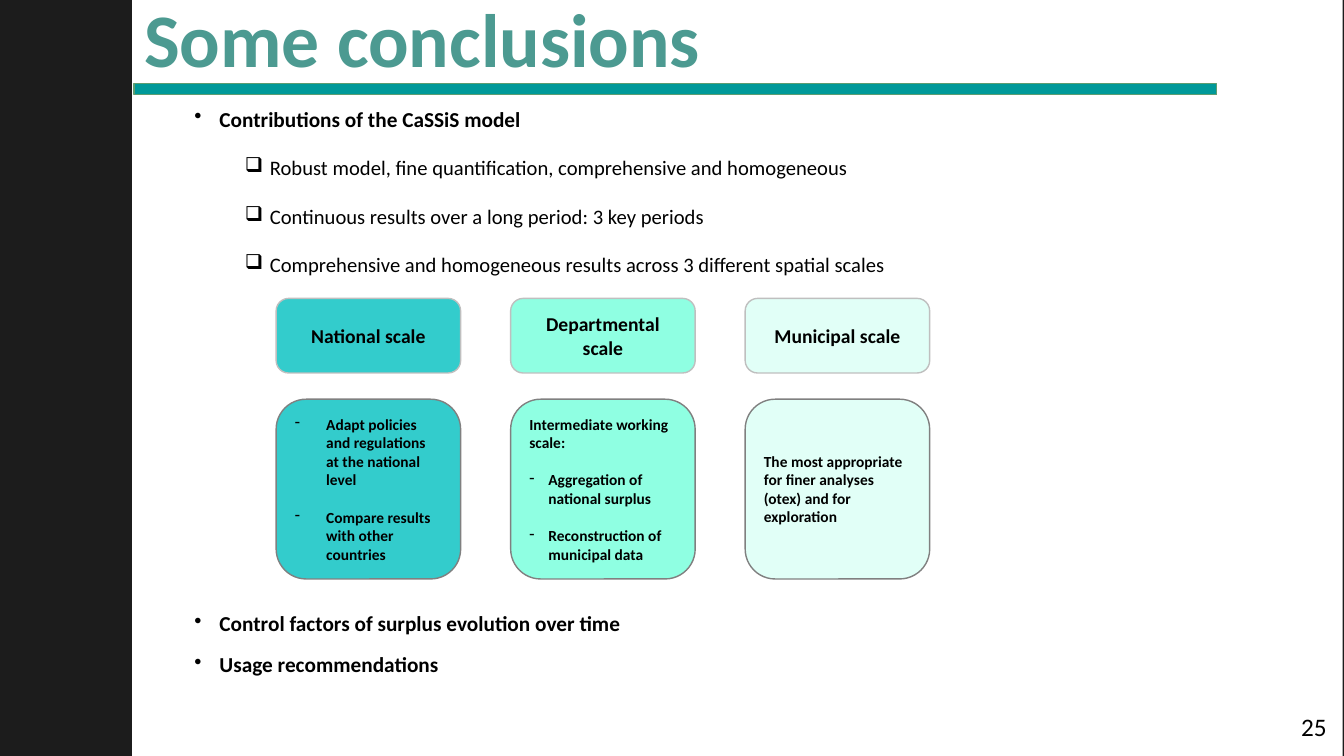
from dataclasses import dataclass

from lxml.etree import SubElement
from pptx import Presentation
from pptx.dml.color import RGBColor as Rgb
from pptx.enum.shapes import MSO_SHAPE as Kind
from pptx.enum.text import MSO_ANCHOR as Anchor, MSO_AUTO_SIZE as Fit, PP_ALIGN as Align
from pptx.oxml.ns import qn
from pptx.shapes.autoshape import Shape
from pptx.slide import Slide
from pptx.text.text import TextFrame
from pptx.util import Cm, Pt

HUES = {
    "dark": "1C1C1C", "white": "FFFFFF", "black": "000000",
    "title": "4C9A91", "bar": "009999", "rim": "5D9D71",
    "light": "BFBFBF", "grey": "808080",
    "nation": "33CCCC", "depart": "8FFFE2", "town": "E1FFF7",
}
FONT = "Calibri"


@dataclass
class Area:
    left: float
    top: float
    width: float
    height: float

    def size(self) -> tuple[Cm, Cm, Cm, Cm]:
        return Cm(self.left), Cm(self.top), Cm(self.width), Cm(self.height)


@dataclass
class Item:
    text: str
    size: float = 11
    bold: bool = True
    mark: str = ""
    left: float = 0
    hang: float = 0
    gap: float = 0
    align: Align = Align.LEFT
    hue: str = "black"


@dataclass
class Scale:
    name: str
    hue: str
    items: list[Item]


def color(name: str) -> Rgb:
    return Rgb.from_string(HUES[name])


def write(frame: TextFrame, items: list[Item]) -> None:
    frame.word_wrap = True
    for pos, item in enumerate(items):
        para = frame.add_paragraph() if pos else frame.paragraphs[0]
        para.alignment = item.align
        if item.mark:
            props = para._p.get_or_add_pPr()
            props.set("marL", str(Cm(item.left)))
            props.set("indent", str(-Cm(item.hang)))
            SubElement(props, qn("a:buChar")).set("char", item.mark)
        para.space_before = Pt(item.gap)
        run = para.add_run()
        run.text = item.text
        font = run.font
        font.name, font.size, font.bold = FONT, Pt(item.size), item.bold
        font.color.rgb = color(item.hue)


def draw(slide: Slide, kind: Kind, area: Area, fill: str, edge: str = "") -> Shape:
    shape = slide.shapes.add_shape(kind, *area.size())
    shape.shadow.inherit = False
    shape.fill.solid()
    shape.fill.fore_color.rgb = color(fill)
    if edge:
        shape.line.color.rgb = color(edge)
        shape.line.width = Pt(1)
    else:
        shape.line.fill.background()
    return shape


def card(slide: Slide, area: Area, fill: str, edge: str, items: list[Item]) -> None:
    frame = draw(slide, Kind.ROUNDED_RECTANGLE, area, fill, edge).text_frame
    frame.vertical_anchor = Anchor.MIDDLE
    write(frame, items)


def label(slide: Slide, area: Area, items: list[Item], inset: float = 0) -> None:
    frame = slide.shapes.add_textbox(*area.size()).text_frame
    frame.margin_left = frame.margin_right = Cm(inset)
    frame.margin_top = frame.margin_bottom = Cm(inset / 2)
    write(frame, items)


def point(text: str, gap: float = 0) -> Item:
    return Item(text, 15.2, True, "•", 1.9, 0.63, gap)


def check(text: str) -> Item:
    return Item(text, 14.7, False, "❑", 3.17, 0.63, 17)


def dash(text: str, hang: float, gap: float = 13.4) -> Item:
    return Item(text, mark="-", left=hang, hang=hang, gap=gap)


SCALES = [
    Scale("National scale", "nation", [
        dash("Adapt policies and regulations at the national level", 0.79, 0),
        dash("Compare results with other countries", 0.79),
    ]),
    Scale("Departmental scale", "depart", [
        Item("Intermediate working scale:"),
        dash("Aggregation of national surplus", 0.48),
        dash("Reconstruction of municipal data", 0.48),
    ]),
    Scale("Municipal scale", "town", [
        Item("The most appropriate for finer analyses (otex) and for exploration"),
    ]),
]


def main() -> None:
    deck = Presentation()
    deck.slide_width, deck.slide_height = Cm(33.87), Cm(19.05)
    slide = deck.slides.add_slide(deck.slide_layouts[5])
    slide.background.fill.solid()
    slide.background.fill.fore_color.rgb = color("dark")

    panel = draw(slide, Kind.RECTANGLE, Area(3.33, 0, 30.51, 19.05), "white")
    slide.shapes._spTree.insert(2, panel._element)

    title = slide.shapes.title
    title.left, title.top, title.width, title.height = Area(3.38, -0.76, 28.78, 3.68).size()
    frame = title.text_frame
    frame.auto_size = Fit.NONE
    frame.vertical_anchor = Anchor.MIDDLE
    write(frame, [Item("Some conclusions", 54, hue="title")])
    frame.paragraphs[0].line_spacing = 0.9

    draw(slide, Kind.RECTANGLE, Area(3.38, 2.11, 27.28, 0.28), "bar", "rim")
    label(slide, Area(32.36, 17.81, 1.5, 1.02),
          [Item("25", 18, False, align=Align.CENTER)], 0.25)

    label(slide, Area(3.63, 2.67, 28.27, 4.5), [
        point("Contributions of the CaSSiS model"),
        check("Robust model, fine quantification, comprehensive and homogeneous"),
        check("Continuous results over a long period: 3 key periods"),
        check("Comprehensive and homogeneous results across 3 different spatial scales"),
    ])
    label(slide, Area(3.63, 15.39, 28.27, 1.8), [
        point("Control factors of surplus evolution over time"),
        point("Usage recommendations", 10.8),
    ])

    for col, scale in enumerate(SCALES):
        left = 6.96 + 5.91 * col
        head = Item(scale.name, 14, align=Align.CENTER)
        card(slide, Area(left, 7.52, 4.65, 1.88), scale.hue, "light", [head])
        card(slide, Area(left, 10.06, 4.65, 4.53), scale.hue, "grey", scale.items)

    deck.save("out.pptx")


if __name__ == "__main__":
    main()
